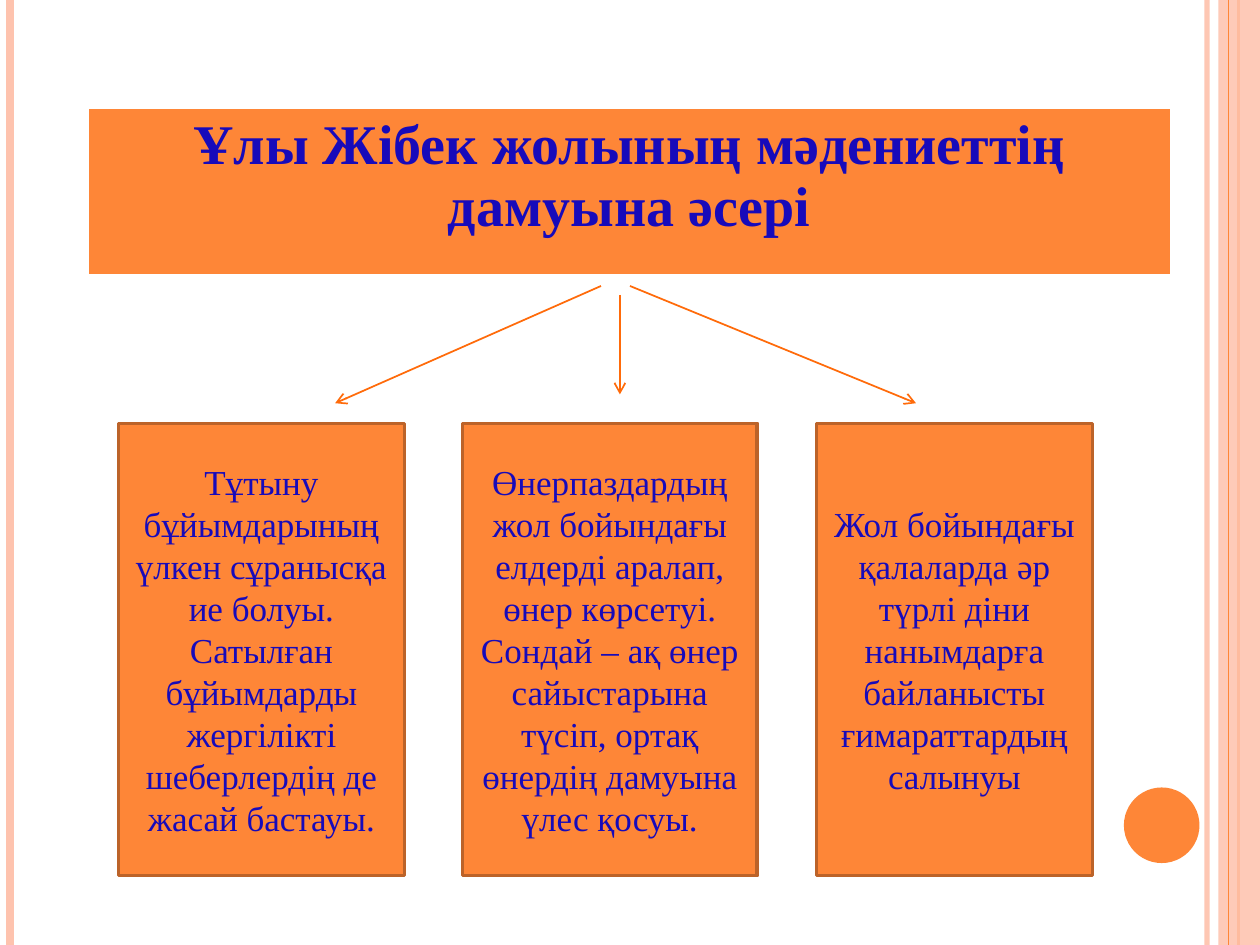
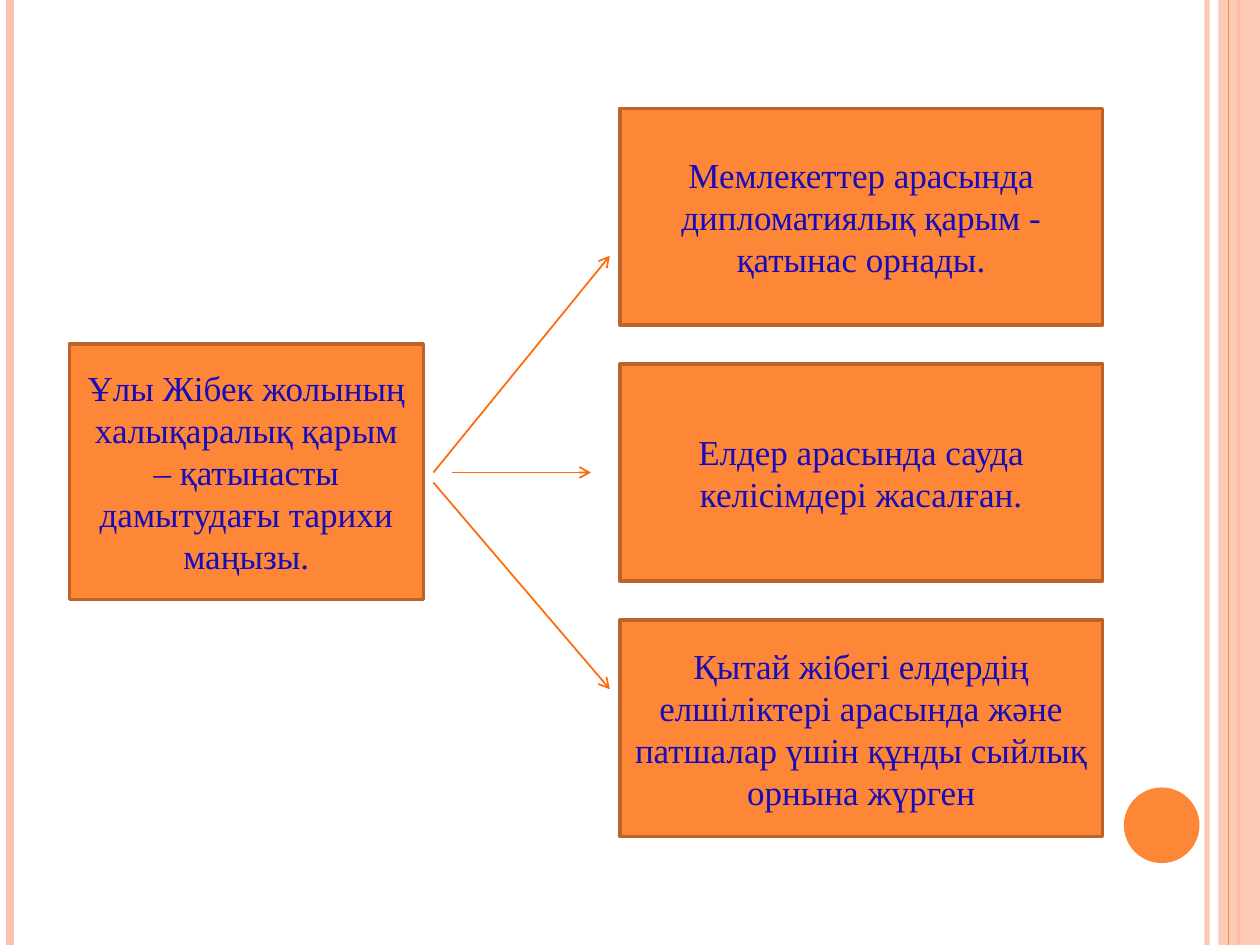
from dataclasses import dataclass

from lxml import etree
from pptx import Presentation
from pptx import util as u
from pptx.dml.color import RGBColor
from pptx.enum import shapes, text
from pptx.oxml import ns

ORANGE = RGBColor(0xFE, 0x86, 0x37)
PEACH = RGBColor(0xFE, 0xC3, 0xAE)
BROWN = RGBColor(0xBC, 0x63, 0x29)
ARROW = RGBColor(0xFF, 0x6B, 0x0A)
NAVY = RGBColor(0x17, 0x0A, 0xBA)
WHITE = RGBColor(0xFF, 0xFF, 0xFF)
WIDTH, HEIGHT = 10, 7.5
BODY_FONT = {"name": "Times New Roman", "size": u.Pt(20), "bold": False}
HEADING_FONT = BODY_FONT | {"size": u.Pt(32), "bold": True}


@dataclass
class Card:
    left: float
    top: float
    width: float
    height: float
    words: str
    inset: float = 0.1


@dataclass
class Rule:
    x: float
    color: RGBColor
    weight: float
    opacity: int = 100


@dataclass
class Arrow:
    start: tuple[float, float]
    end: tuple[float, float]


LEFT_RULES = [Rule(9.58, PEACH, 3, 93), Rule(0.08, PEACH, 4.5), Rule(9.83, ORANGE, 1.5)]
BAND_RULE = Rule(9.75, ORANGE, 0.75)


def set_opacity(owner, percent: int) -> None:
    """Add an alpha value to the solid colour inside owner."""
    color = owner.find(".//" + ns.qn("a:srgbClr"))
    etree.SubElement(color, ns.qn("a:alpha"), val=str(percent * 1000))


def write(frame, words: str, font: dict) -> None:
    paragraph = frame.paragraphs[0]
    paragraph.alignment = text.PP_ALIGN.CENTER
    run = paragraph.add_run()
    run.text = words
    for key, value in font.items():
        setattr(run.font, key, value)
    run.font.color.rgb = NAVY


def add_line(slide, start, end, color: RGBColor, weight: float):
    ends = [u.Inches(value) for value in (*start, *end)]
    line = slide.shapes.add_connector(shapes.MSO_CONNECTOR.STRAIGHT, *ends)
    line.line.color.rgb = color
    line.line.width = u.Pt(weight)
    etree.SubElement(line._element.spPr, ns.qn("a:effectLst"))
    return line


def add_filled(slide, kind, box, color: RGBColor):
    shape = slide.shapes.add_shape(kind, *map(u.Inches, box))
    shape.shadow.inherit = False
    shape.fill.solid()
    shape.fill.fore_color.rgb = color
    shape.line.fill.background()
    return shape


def add_rule(slide, rule: Rule) -> None:
    line = add_line(slide, (rule.x, 0), (rule.x, HEIGHT), rule.color, rule.weight)
    if rule.opacity < 100:
        set_opacity(line.line._ln, rule.opacity)


def add_arrow(slide, arrow: Arrow) -> None:
    line = add_line(slide, arrow.start, arrow.end, ARROW, 1)
    etree.SubElement(line.line._ln, ns.qn("a:tailEnd"), type="arrow")


def add_card(slide, card: Card) -> None:
    box = (card.left, card.top, card.width, card.height)
    shape = add_filled(slide, shapes.MSO_SHAPE.RECTANGLE, box, ORANGE)
    shape.line.color.rgb = BROWN
    shape.line.width = u.Pt(2)
    frame = shape.text_frame
    frame.word_wrap = True
    frame.vertical_anchor = text.MSO_ANCHOR.MIDDLE
    frame.margin_left = frame.margin_right = u.Inches(card.inset)
    write(frame, card.words, BODY_FONT)


def add_heading(slide, words: str) -> None:
    """One-cell table with white borders."""
    box = map(u.Inches, (0.7, 0.86, 8.59, 1.33))
    table = slide.shapes.add_table(1, 1, *box).table
    table.first_row = table.horz_banding = False
    cell = table.cell(0, 0)
    write(cell.text_frame, words, HEADING_FONT)
    properties = cell._tc.get_or_add_tcPr()
    for side, weight in {"L": 1, "R": 1, "T": 1, "B": 3}.items():
        border = etree.SubElement(properties, ns.qn(f"a:ln{side}"), w=str(u.Pt(weight)))
        fill = etree.SubElement(border, ns.qn("a:solidFill"))
        etree.SubElement(fill, ns.qn("a:srgbClr"), val=str(WHITE))
    cell.fill.solid()
    cell.fill.fore_color.rgb = ORANGE


def add_framed_slide(deck):
    """Blank slide with the side rules, the right band and the disc."""
    slide = deck.slides.add_slide(deck.slide_layouts[6])
    for rule in LEFT_RULES:
        add_rule(slide, rule)
    band = add_filled(slide, shapes.MSO_SHAPE.RECTANGLE, (9.67, 0, 0.33, HEIGHT), PEACH)
    set_opacity(band._element.spPr, 87)
    add_rule(slide, BAND_RULE)
    add_filled(slide, shapes.MSO_SHAPE.OVAL, (8.92, 6.25, 0.6, 0.6), ORANGE)
    return slide


def add_diagram(slide, cards: list[Card], arrows: list[Arrow]) -> None:
    for card in cards:
        add_card(slide, card)
    for arrow in arrows:
        add_arrow(slide, arrow)


def build_culture(deck) -> None:
    slide = add_framed_slide(deck)
    add_heading(slide, "Ұлы Жібек жолының мәдениеттің дамуына әсері")
    influences = [
        (0.94, 2.27, "Тұтыну бұйымдарының үлкен сұранысқа ие болуы. Сатылған "
                     "бұйымдарды жергілікті шеберлердің де жасай бастауы."),
        (3.67, 2.34, "Өнерпаздардың жол бойындағы елдерді аралап, өнер көрсетуі. "
                     "Сондай – ақ өнер сайыстарына түсіп, ортақ өнердің дамуына "
                     "үлес қосуы."),
        (6.48, 2.19, "Жол бойындағы қалаларда әр түрлі діни нанымдарға "
                     "байланысты ғимараттардың салынуы"),
    ]
    cards = [Card(left, 3.36, width, 3.59, words) for left, width, words in influences]
    add_diagram(slide, cards, [
        Arrow((4.77, 2.27), (2.66, 3.2)),
        Arrow((5, 2.27), (7.27, 3.2)),
        Arrow((4.92, 2.34), (4.92, 3.13)),
    ])


def build_relations(deck) -> None:
    slide = add_framed_slide(deck)
    significance = Card(0.55, 2.73, 2.81, 2.03, "Ұлы Жібек жолының халықаралық қарым "
                        "– қатынасты дамытудағы тарихи маңызы.", inset=0.12)
    outcomes = [
        "Мемлекеттер арасында дипломатиялық қарым - қатынас орнады.",
        "Елдер арасында сауда келісімдері жасалған.",
        "Қытай жібегі елдердің елшіліктері арасында және патшалар үшін "
        "құнды сыйлық орнына жүрген",
    ]
    cards = [Card(4.92, 0.86 + 2.03 * row, 3.83, 1.72, words)
             for row, words in enumerate(outcomes)]
    add_diagram(slide, [significance, *cards], [
        Arrow((3.44, 3.75), (4.84, 2.03)),
        Arrow((3.44, 3.83), (4.84, 5.47)),
        Arrow((3.59, 3.75), (4.69, 3.75)),
    ])


def main() -> None:
    deck = Presentation()
    deck.slide_width, deck.slide_height = u.Inches(WIDTH), u.Inches(HEIGHT)
    build_culture(deck)
    build_relations(deck)
    deck.save("out.pptx")


if __name__ == "__main__":
    main()
